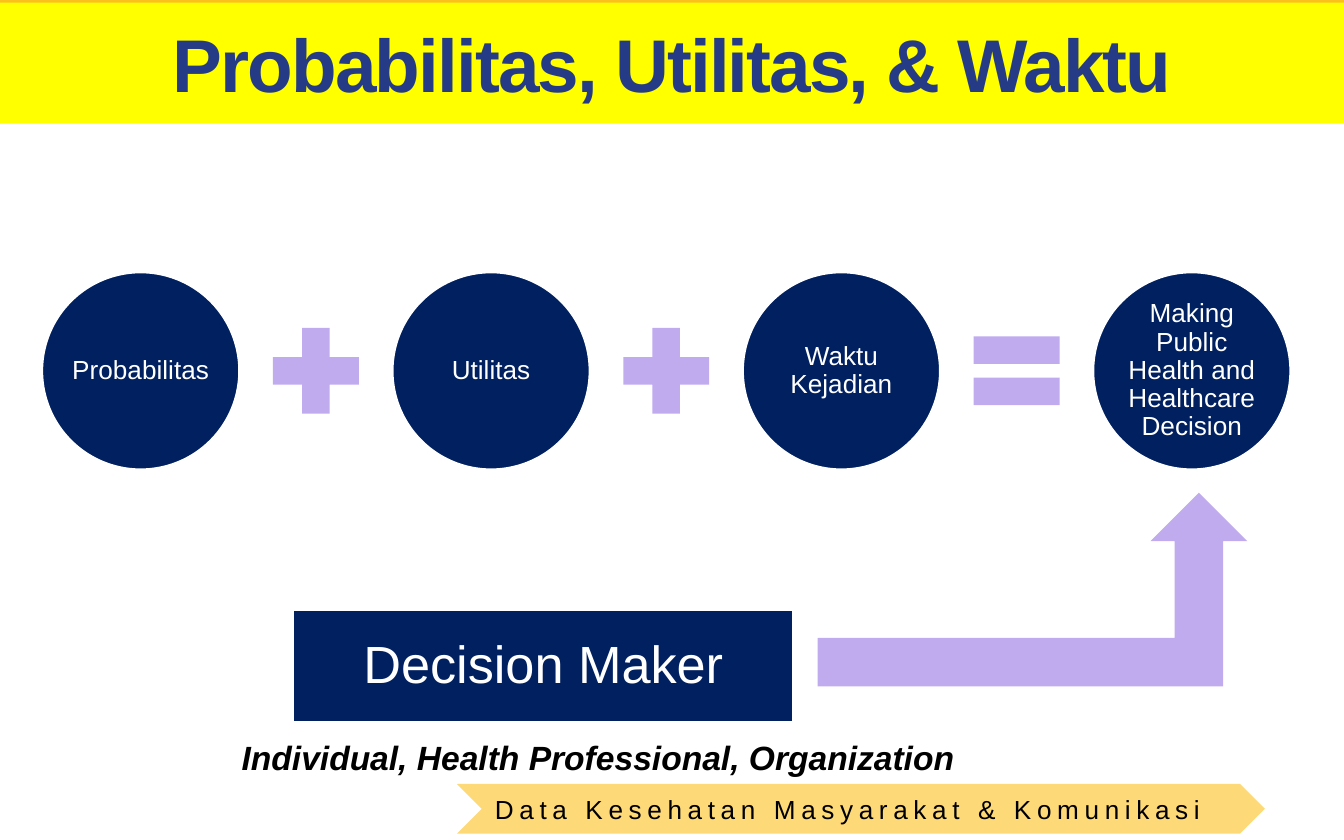
"""Build the slide on probability, utility and time in decision making."""
from pptx import Presentation
from pptx.dml.color import RGBColor
from pptx.enum.shapes import MSO_SHAPE as Preset
from pptx.enum.text import MSO_ANCHOR as Anchor, MSO_AUTO_SIZE as AutoSize, PP_ALIGN as Align
from pptx.util import Pt

COLORS = {
    "navy": "002060", "lilac": "C0ABEF", "yellow": "FFFF00", "gold": "FBC01E",
    "sand": "FDD978", "title": "263B86", "white": "FFFFFF", "black": "000000",
}
FACTORS = ["Probabilitas", "Utilitas", "Waktu Kejadian",
           "Making Public Health and Healthcare Decision"]
OPERATORS = [Preset.MATH_PLUS, Preset.MATH_PLUS, Preset.MATH_EQUAL]
CIRCLE_LEFT, CIRCLE_TOP, CIRCLE_SIZE, CIRCLE_STEP = 21.4, 144.7, 108, 187.7
OPERATOR_SIZE = 62.6


def color(name):
    """Return the named colour."""
    return RGBColor.from_string(COLORS[name])


def write(shape, text, size, ink, align=Align.CENTER, spacing=None, bold=False, italic=False):
    """Set one styled paragraph on a shape and return it."""
    frame = shape.text_frame
    frame.vertical_anchor = Anchor.MIDDLE
    para = frame.paragraphs[0]
    para.alignment = align
    font = para.font
    font.name, font.size, font.bold, font.italic = "Arial", Pt(size), bold, italic
    font.color.rgb = color(ink)
    span = para.add_run()
    span.text = text
    if spacing is not None:
        span.font._element.set("spc", str(spacing * 100))
    return para


def add_block(page, preset, left, top, width, height, fill, outlined=False):
    """Add a flat filled shape, with a white outline if asked."""
    shape = page.shapes.add_shape(preset, Pt(left), Pt(top), Pt(width), Pt(height))
    shape.shadow.inherit = False
    shape.fill.solid()
    shape.fill.fore_color.rgb = color(fill)
    if outlined:
        shape.line.color.rgb = color("white")
        shape.line.width = Pt(3.5)
    else:
        shape.line.fill.background()
    return shape


def add_node(page, preset, left, top, width, height, text, size):
    """Add a navy node with a tightly set white label."""
    node = add_block(page, preset, left, top, width, height, "navy", outlined=True)
    frame = node.text_frame
    frame.word_wrap = True
    frame.margin_left = frame.margin_right = frame.margin_top = frame.margin_bottom = Pt(1.4)
    write(node, text, size, "white").line_spacing = 0.9


def add_equation(page):
    """Add the circles and the operators centred between them."""
    gap = CIRCLE_STEP - CIRCLE_SIZE
    operator_top = CIRCLE_TOP + (CIRCLE_SIZE - OPERATOR_SIZE) / 2
    for index, factor in enumerate(FACTORS):
        left = CIRCLE_LEFT + index * CIRCLE_STEP
        add_node(page, Preset.OVAL, left, CIRCLE_TOP, CIRCLE_SIZE, CIRCLE_SIZE, factor, 14)
        if index < len(OPERATORS):
            operator_left = left + CIRCLE_SIZE + (gap - OPERATOR_SIZE) / 2
            add_block(page, OPERATORS[index], operator_left, operator_top,
                      OPERATOR_SIZE, OPERATOR_SIZE, "lilac")


def add_caption(page):
    """Add the line that names the decision makers."""
    box = page.shapes.add_textbox(Pt(122.4), Pt(391), Pt(400.3), Pt(28.8))
    box.text_frame.word_wrap = False
    write(box, "Individual, Health Professional, Organization", 18, "black",
          Align.LEFT, bold=True, italic=True)


def add_title(page):
    """Turn the title placeholder into the front yellow band."""
    title = page.shapes.title
    title.left, title.top, title.width, title.height = Pt(0), Pt(1.4), Pt(720), Pt(64.8)
    title.fill.solid()
    title.fill.fore_color.rgb = color("yellow")
    title.text_frame.auto_size = AutoSize.NONE
    write(title, "Probabilitas, Utilitas, & Waktu", 40, "title", spacing=-1, bold=True)
    title.element.getparent().append(title.element)


def main():
    """Build and save the deck."""
    deck = Presentation()
    deck.slide_width, deck.slide_height = Pt(720), Pt(450)
    page = deck.slides.add_slide(deck.slide_layouts[5])
    add_block(page, Preset.RECTANGLE, 0, 0, 720, 23.8, "gold")
    ribbon = add_block(page, Preset.CHEVRON, 244.8, 420, 432.8, 26.6, "sand")
    write(ribbon, "Data Kesehatan Masyarakat & Komunikasi", 14, "black", Align.JUSTIFY, spacing=3)
    add_equation(page)
    add_node(page, Preset.RECTANGLE, 156, 325.6, 270, 62.6, "Decision Maker", 28)
    add_block(page, Preset.BENT_UP_ARROW, 438, 264, 230.2, 103.7, "lilac")
    add_caption(page)
    add_title(page)
    deck.save("out.pptx")


if __name__ == "__main__":
    main()
